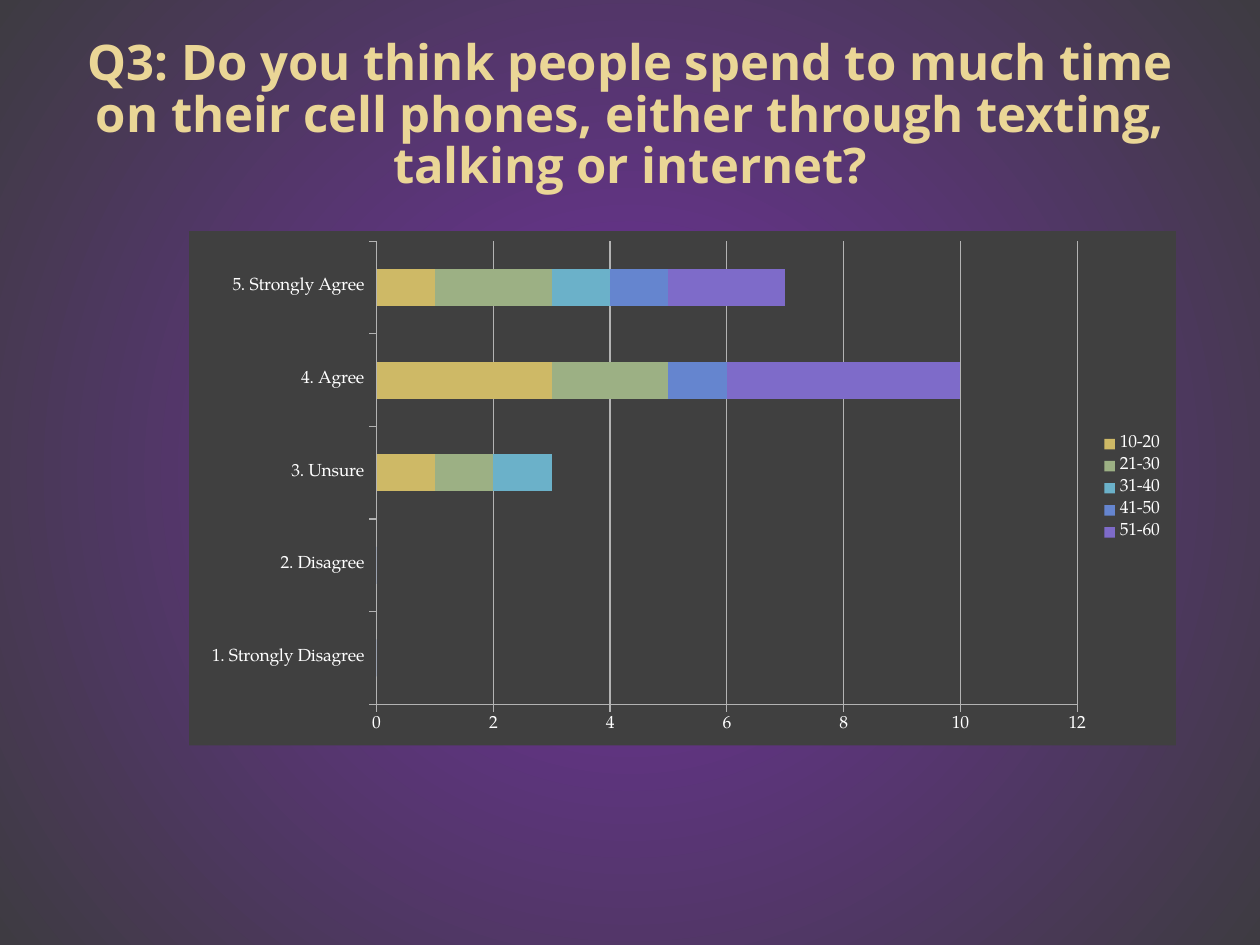
from lxml.etree import SubElement
from pptx import Presentation
from pptx.chart.data import CategoryChartData
from pptx.dml.color import RGBColor as RGB
from pptx.enum.chart import XL_CHART_TYPE as ChartType, XL_LEGEND_POSITION as LegendPos, XL_TICK_MARK as Tick
from pptx.enum.text import MSO_ANCHOR as Anchor, PP_ALIGN as Align
from pptx.oxml.ns import qn
from pptx.util import Pt

COLORS = {"glow": "7030A0", "edge": "3E3B42", "title": "EAD696",
          "panel": "404040", "text": "FFFFFF", "line": "B3B3B3"}
AGE_GROUPS = {
    "10-20": ([0, 0, 1, 3, 1], "CEB966"),
    "21-30": ([0, 0, 1, 2, 2], "9CB084"),
    "31-40": ([0, 0, 1, 0, 1], "6BB1C9"),
    "41-50": ([0, 0, 0, 1, 1], "6585CF"),
    "51-60": ([0, 0, 0, 4, 2], "7E6BC9"),
}


def apply(target, values):
    for name, value in values.items():
        setattr(target, name, value)


def add_xml(parent, tag, **attributes):
    return SubElement(parent, qn(tag), attributes)


deck = Presentation()
apply(deck, {"slide_width": Pt(720), "slide_height": Pt(540)})
slide = deck.slides.add_slide(deck.slide_layouts[5])

# Background: radial glow from the centre
backdrop = slide.background.fill
backdrop.gradient()
for stop, color in zip(backdrop.gradient_stops, ("glow", "edge")):
    stop.color.rgb = RGB.from_string(COLORS[color])
    stop.position = 0 if color == "glow" else 1
gradient = slide.background._cSld.find(".//" + qn("a:gradFill"))
gradient.remove(gradient.find(qn("a:lin")))
circle = add_xml(gradient, "a:path", path="circle")
add_xml(circle, "a:fillToRect", l="50000", t="50000", r="50000", b="50000")

# Question
question = slide.shapes.title
apply(question, {"left": Pt(36), "top": Pt(21.6), "width": Pt(648), "height": Pt(90)})
apply(question.text_frame, {
    "text": "Q3: Do you think people spend to much time on their cell phones, "
            "either through texting, talking or internet?",
    "vertical_anchor": Anchor.MIDDLE, "word_wrap": True})
wording = question.text_frame.paragraphs[0]
apply(wording, {"alignment": Align.CENTER, "line_spacing": 0.88})
question_font = wording.runs[0].font
apply(question_font, {"name": "Open Sans", "size": Pt(28), "bold": True})
question_font.color.rgb = RGB.from_string(COLORS["title"])

# Answers by age group
answers = CategoryChartData()
answers.categories = ["1. Strongly Disagree", "2. Disagree", "3. Unsure",
                      "4. Agree", "5. Strongly Agree"]
for age, (counts, _) in AGE_GROUPS.items():
    answers.add_series(age, counts)
chart = slide.shapes.add_chart(ChartType.BAR_STACKED, Pt(108), Pt(132),
                               Pt(564), Pt(294), answers).chart
apply(chart, {"has_title": False, "has_legend": True})
apply(chart.legend, {"position": LegendPos.RIGHT, "include_in_layout": False})
apply(chart.font, {"name": "TeX Gyre Pagella", "size": Pt(10)})
chart.font.color.rgb = RGB.from_string(COLORS["text"])

# Bars
bars = chart.plots[0]
apply(bars, {"gap_width": 150, "overlap": 100, "vary_by_categories": False})
for series, (_, color) in zip(bars.series, AGE_GROUPS.values()):
    series.format.fill.solid()
    series.format.fill.fore_color.rgb = RGB.from_string(color)

# Axes and gridlines
apply(chart.category_axis, {"has_major_gridlines": False})
apply(chart.value_axis, {"has_major_gridlines": True, "minimum_scale": 0,
                         "maximum_scale": 12, "major_unit": 2})
for axis in (chart.category_axis, chart.value_axis):
    apply(axis, {"major_tick_mark": Tick.OUTSIDE, "minor_tick_mark": Tick.NONE})
for ruled in (chart.category_axis, chart.value_axis, chart.value_axis.major_gridlines):
    ruled.format.line.width = Pt(0.75)
    ruled.format.line.color.rgb = RGB.from_string(COLORS["line"])

# Dark panel behind the chart
chart_space = chart._chartSpace
panel = add_xml(chart_space, "c:spPr")
add_xml(add_xml(panel, "a:solidFill"), "a:srgbClr", val=COLORS["panel"])
add_xml(add_xml(panel, "a:ln"), "a:noFill")
chart_space.find(qn("c:txPr")).addprevious(panel)

# Plot area position, as shares of the panel
plot_area = chart_space.find(".//" + qn("c:plotArea"))
for old_layout in plot_area.findall(qn("c:layout")):
    plot_area.remove(old_layout)
layout = add_xml(plot_area, "c:layout")
plot_area.insert(0, layout)
manual = add_xml(layout, "c:manualLayout")
for tag, value in {"layoutTarget": "inner", "xMode": "edge", "yMode": "edge",
                   "x": "0.19", "y": "0.02", "w": "0.71", "h": "0.9"}.items():
    add_xml(manual, "c:" + tag, val=value)

deck.save("out.pptx")
